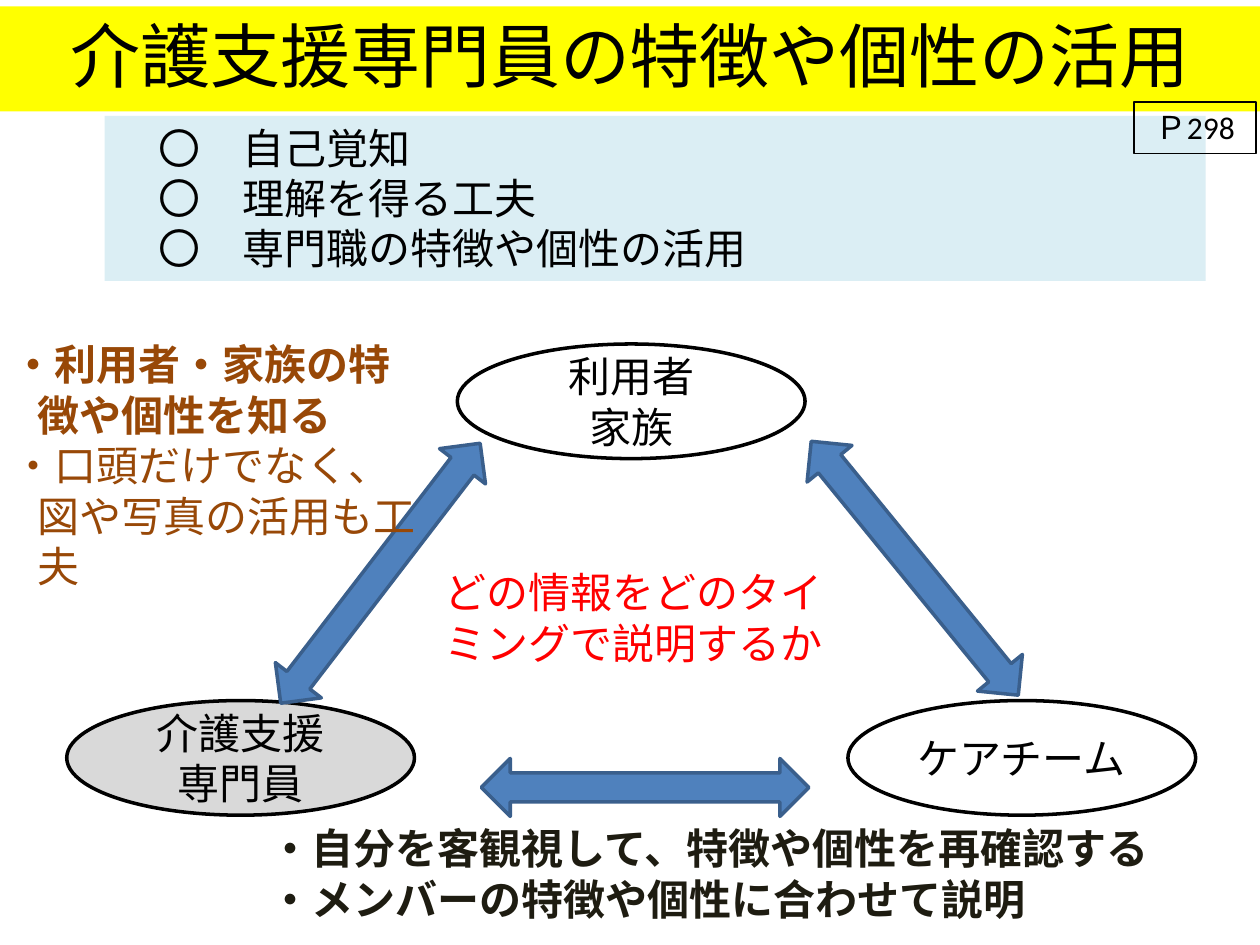
from pptx import Presentation, util as u
from pptx.dml.color import RGBColor
from pptx.enum import shapes, text

COLOURS = {
    "black": "000000", "yellow": "FFFF00", "pale": "DBEEF4", "grey": "D9D9D9",
    "blue": "4F81BD", "navy": "3A5F8C", "brown": "984807", "red": "FF0000",
    "dark": "1E1C11",
}
FONT = "Calibri"
WIDTH, HEIGHT = 10, 7.5
KIND = shapes.MSO_SHAPE
CENTER = text.PP_ALIGN.CENTER
TOP, MIDDLE = text.MSO_ANCHOR.TOP, text.MSO_ANCHOR.MIDDLE

# Content
TITLE = "介護支援専門員の特徴や個性の活用"
TOPICS = ["自己覚知", "理解を得る工夫", "専門職の特徴や個性の活用"]
PAGE_TAG = "Ｐ298"

# Triangle of people: lines, column, row, fill
COLUMNS = [0.53 + 3.1 * i for i in range(3)]
ROWS = [2.73, 5.56]
OVAL_SIZE = (2.76, 0.91)
PEOPLE = [
    (["介護支援", "専門員"], 0, 1, "grey"),
    (["利用者", "家族"], 1, 0, None),
    (["ケアチーム"], 2, 1, None),
]

# Two-way arrows: left, top, rotation
ARROW_SIZE = (2.6, 0.46)
ARROWS = [(3.82, 6.02, 0), (1.72, 4.32, 307.5), (5.96, 4.28, 230.8)]

# Notes: box, colour, hanging indent, (line, bold)
NOTES = [
    ((2.04, 6.48, 7.44, 0.91), "dark", 0,
     [("・自分を客観視して、特徴や個性を再確認する", True),
      ("・メンバーの特徴や個性に合わせて説明", True)]),
    ((0, 2.64, 3.4, 1.72), "brown", 0.2,
     [("・利用者・家族の特徴や個性を知る", True),
      ("・口頭だけでなく、図や写真の活用も工夫", False)]),
    ((3.43, 4.45, 3.31, 0.91), "red", 0,
     [("どの情報をどのタイミングで説明するか", False)]),
]


def colour(name):
    return RGBColor.from_string(COLOURS[name])


def write(box, lines, size=24, ink="black", align=None, anchor=TOP, hang=0):
    """Fill a box with (line, bold) paragraphs."""
    frame = box.text_frame
    frame.word_wrap = True
    frame.vertical_anchor = anchor
    frame.auto_size = (text.MSO_AUTO_SIZE.NONE if anchor == MIDDLE
                       else text.MSO_AUTO_SIZE.SHAPE_TO_FIT_TEXT)
    for i, (line, bold) in enumerate(lines):
        para = frame.add_paragraph() if i else frame.paragraphs[0]
        para.alignment = align or text.PP_ALIGN.LEFT
        if hang:
            para._p.get_or_add_pPr().set("marL", str(u.Inches(hang)))
            para._p.get_or_add_pPr().set("indent", str(-u.Inches(hang)))
        span = para.add_run()
        span.text = line
        formats = {"name": FONT, "size": u.Pt(size), "bold": bold}
        for key, value in formats.items():
            setattr(span.font, key, value)
        span.font.color.rgb = colour(ink)


def add_box(page, kind, place, fill=None, line=None, weight=2):
    box = page.shapes.add_shape(kind, *map(u.Inches, place))
    box.shadow.inherit = False
    if fill:
        box.fill.solid()
        box.fill.fore_color.rgb = colour(fill)
    else:
        box.fill.background()
    if line:
        box.line.color.rgb = colour(line)
        box.line.width = u.Pt(weight)
    else:
        box.line.fill.background()
    return box


def main():
    deck = Presentation()
    deck.slide_width, deck.slide_height = u.Inches(WIDTH), u.Inches(HEIGHT)
    page = deck.slides.add_slide(deck.slide_layouts[5])

    # Title band
    title = page.shapes.title
    band = {"left": 0, "top": 0.05, "width": WIDTH, "height": 0.77}
    for key, value in band.items():
        setattr(title, key, u.Inches(value))
    title.fill.solid()
    title.fill.fore_color.rgb = colour("yellow")
    write(title, [(TITLE, False)], size=40, align=CENTER)

    # Topic panel
    panel = add_box(page, KIND.RECTANGLE, (0.83, 0.92, 8.74, 1.31), "pale")
    write(panel, [(f"　〇　{topic}", False) for topic in TOPICS])

    # People and the arrows between them
    for names, column, row, fill in PEOPLE:
        place = (COLUMNS[column], ROWS[row], *OVAL_SIZE)
        oval = add_box(page, KIND.OVAL, place, fill, "black")
        write(oval, [(name, False) for name in names],
              align=CENTER, anchor=MIDDLE)
    for left, top, rotation in ARROWS:
        arrow = add_box(page, KIND.LEFT_RIGHT_ARROW,
                        (left, top, *ARROW_SIZE), "blue", "navy")
        arrow.rotation = rotation

    # Notes around the triangle
    for place, ink, hang, lines in NOTES:
        note = page.shapes.add_textbox(*map(u.Inches, place))
        write(note, lines, ink=ink, hang=hang)

    # Page reference
    tag = add_box(page, KIND.RECTANGLE, (9, 0.81, 0.97, 0.41),
                  line="black", weight=0.75)
    write(tag, [(PAGE_TAG, False)], size=18, align=CENTER)

    deck.save("out.pptx")


if __name__ == "__main__":
    main()
